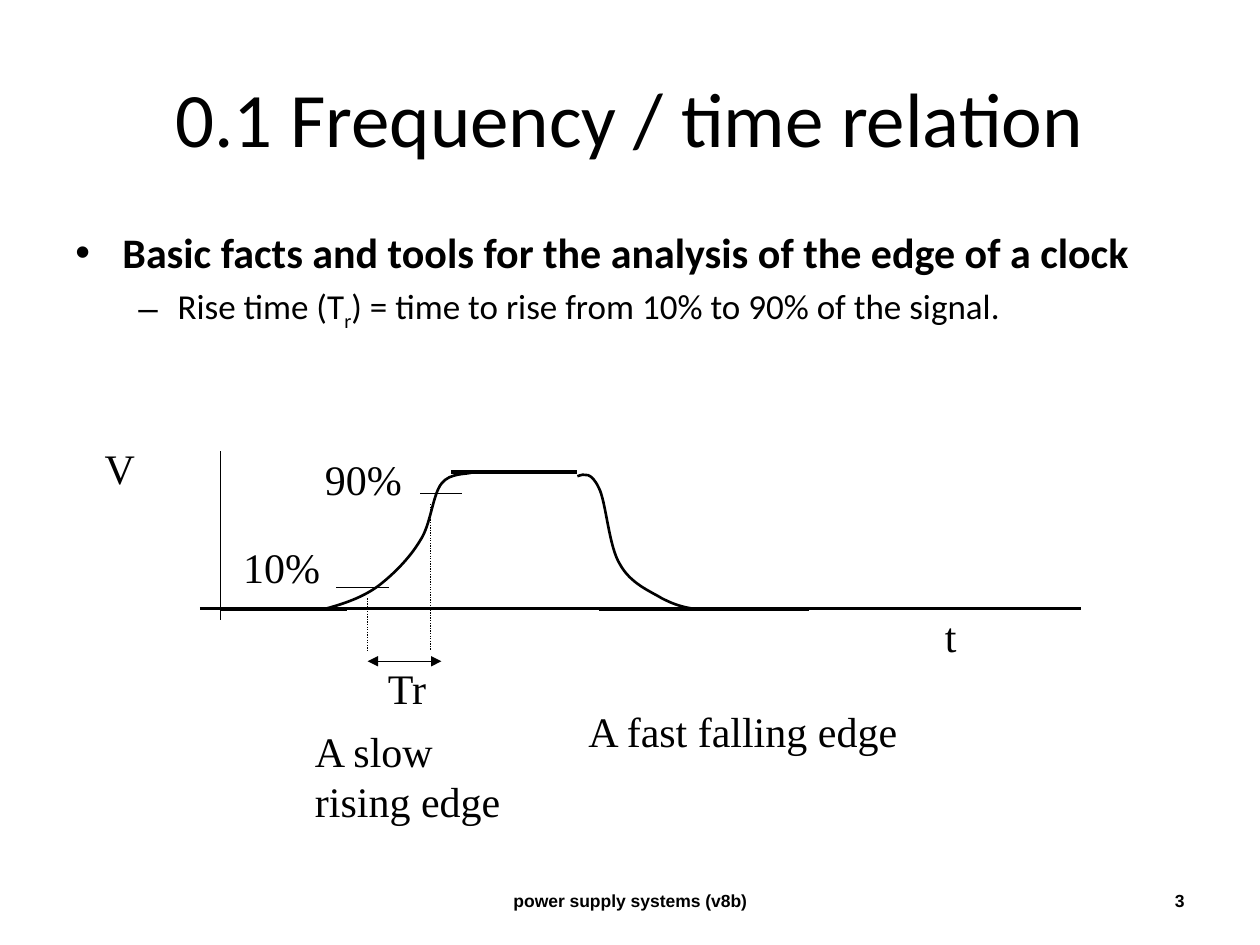
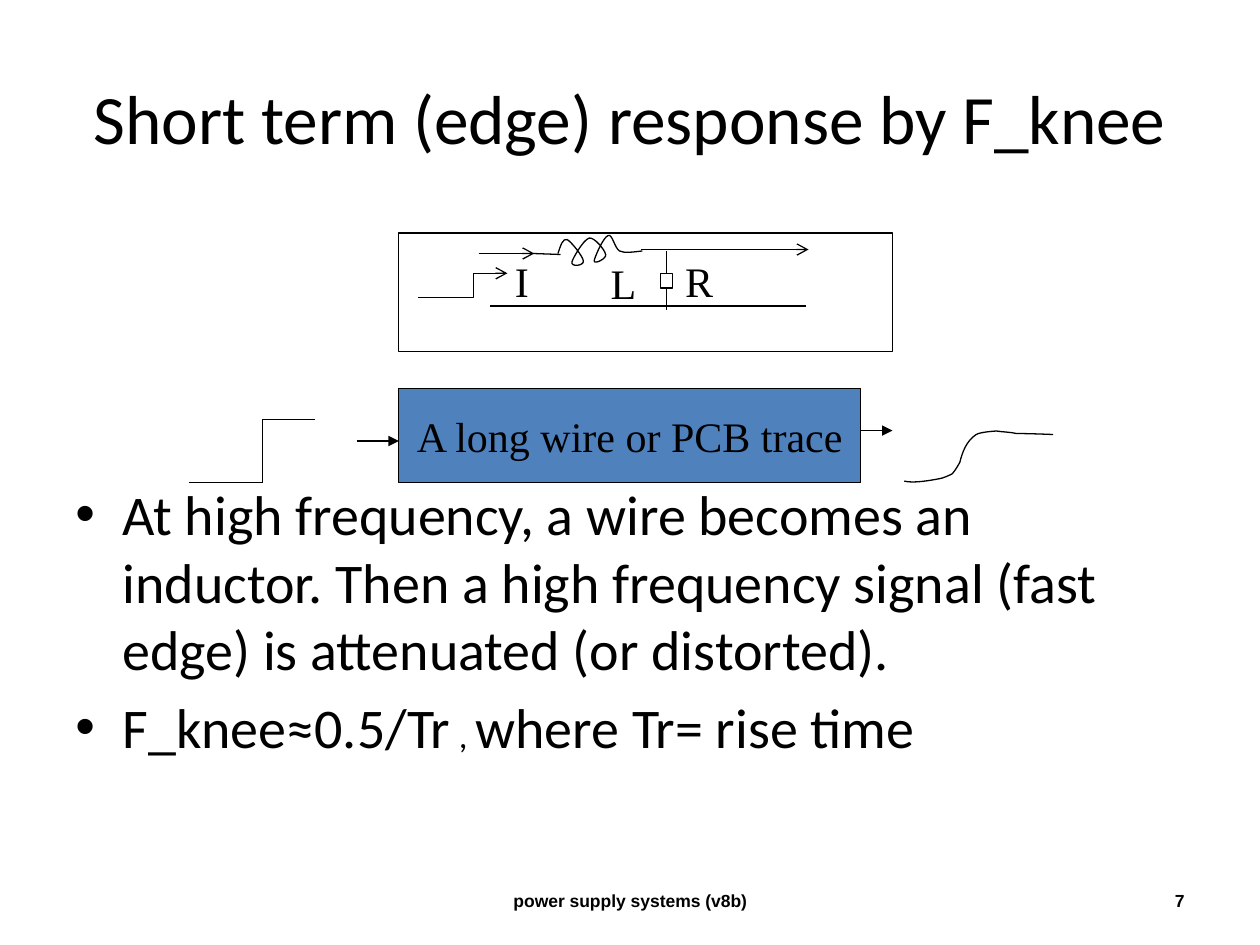
import dataclasses
import itertools

import lxml.etree
import pptx
import pptx.dml.color
import pptx.enum.dml
import pptx.enum.shapes
import pptx.enum.text
import pptx.oxml.ns
import pptx.util

Cm, Pt = pptx.util.Cm, pptx.util.Pt
qn = pptx.oxml.ns.qn
ALIGN = pptx.enum.text.PP_ALIGN
ANCHOR = pptx.enum.text.MSO_ANCHOR
FIT = pptx.enum.text.MSO_AUTO_SIZE
RECTANGLE = pptx.enum.shapes.MSO_SHAPE.RECTANGLE
STRAIGHT = pptx.enum.shapes.MSO_CONNECTOR.STRAIGHT
DOTTED = pptx.enum.dml.MSO_LINE.ROUND_DOT


@dataclasses.dataclass(frozen=True)
class Theme:
    ink: str = "000000"
    paper: str = "FFFFFF"
    accent: str = "4F81BD"
    heading_font: str = "Calibri"
    label_font: str = "Times New Roman"
    footer_font: str = "Arial"
    title: float = 44
    long_title: float = 39.6
    body: float = 32
    fact: float = 24
    detail: float = 20
    label: float = 24
    footer: float = 10
    thin: float = 0.75
    medium: float = 1.5
    thick: float = 2.25


@dataclasses.dataclass(frozen=True)
class Box:
    """A region in centimetres."""
    left: float
    top: float
    width: float
    height: float

    def point(self, x, y):
        return Cm(self.left + x), Cm(self.top + y)

    def inner(self, x, y, width, height):
        return Box(self.left + x, self.top + y, width, height)

    def frame(self):
        return [Cm(n) for n in (self.left, self.top, self.width, self.height)]


THEME = Theme()
TITLE_BOX = Box(1.27, 0.76, 22.86, 3.18)
FOOTER_BOX = Box(8.68, 17.65, 8.05, 1.02)
NUMBER_BOX = Box(18.21, 17.65, 5.92, 1.02)
FOOTER_TEXT = "power supply systems (v8b)"
# Bullet sign, left margin and hanging indent by level
BULLETS = [("•", 0.95, -0.95), ("–", 2.06, -0.79)]


def rgb(value):
    return pptx.dml.color.RGBColor.from_string(value)


# ---- Text ----

def add_span(para, text, font, size, bold=False, baseline=None):
    span = para.add_run()
    span.text = text
    for name, value in {"name": font, "size": Pt(size), "bold": bold}.items():
        setattr(span.font, name, value)
    span.font.color.rgb = rgb(THEME.ink)
    if baseline:
        span.font._element.set("baseline", str(baseline))


def add_text(page, box, lines, font, size, bold=False, align=ALIGN.LEFT, **settings):
    frame = page.shapes.add_textbox(*box.frame()).text_frame
    for name, value in {"word_wrap": True, **settings}.items():
        setattr(frame, name, value)
    for index, line in enumerate(lines):
        para = frame.add_paragraph() if index else frame.paragraphs[0]
        para.alignment = align
        add_span(para, line, font, size, bold)


def add_label(page, area, x, y, width, *lines, wrap=False):
    add_text(page, area.inner(x, y, width, 0.25 + 1.02 * len(lines)), lines,
             THEME.label_font, THEME.label, word_wrap=wrap,
             auto_size=FIT.SHAPE_TO_FIT_TEXT)


def add_bullets(page, box, items):
    """Each item is a level and its spans: (text, size, further formats)."""
    frame = page.shapes.add_textbox(*box.frame()).text_frame
    frame.word_wrap = True
    for index, (level, spans) in enumerate(items):
        para = frame.add_paragraph() if index else frame.paragraphs[0]
        para.level = level
        para.space_before = Pt(0.2 * spans[0][1])
        sign, margin, indent = BULLETS[level]
        properties = para._p.get_or_add_pPr()
        properties.set("marL", str(Cm(margin)))
        properties.set("indent", str(Cm(indent)))
        for tag, key, value in (("a:buFont", "typeface", "Arial"),
                                ("a:buChar", "char", sign)):
            lxml.etree.SubElement(properties, qn(tag)).set(key, value)
        for text, size, formats in spans:
            add_span(para, text, THEME.heading_font, size, **formats)


# ---- Lines and shapes ----

def style_line(shape, width, dash=None, head=None, tail=None):
    shape.line.color.rgb = rgb(THEME.ink)
    shape.line.width = Pt(width)
    if dash:
        shape.line.dash_style = dash
    outline = shape.element.spPr.find(qn("a:ln"))
    for tag, kind in (("a:headEnd", head), ("a:tailEnd", tail)):
        if kind:
            lxml.etree.SubElement(outline, qn(tag)).set("type", kind)


def add_line(page, area, start, end, width=THEME.thin, **style):
    line = page.shapes.add_connector(STRAIGHT, *area.point(*start), *area.point(*end))
    style_line(line, width, **style)
    lxml.etree.SubElement(line.element.spPr, qn("a:effectLst"))
    return line


def add_outline(page, area, points, width=THEME.thin, curved=False, **style):
    """Joins the points; if curved, every three points make a Bézier segment."""
    start, *others = [area.point(*point) for point in points]
    builder = page.shapes.build_freeform(*start)
    builder.add_line_segments(others, close=False)
    shape = builder.convert_to_shape()
    shape.shadow.inherit = False
    shape.fill.background()
    style_line(shape, width, **style)
    if curved:
        drawn = shape.element.find(".//" + qn("a:path"))
        steps = drawn.findall(qn("a:lnTo"))
        for index in range(0, len(steps), 3):
            bezier = lxml.etree.SubElement(drawn, qn("a:cubicBezTo"))
            for step in steps[index:index + 3]:
                bezier.append(step[0])
                drawn.remove(step)


def add_rectangle(page, box, fill):
    shape = page.shapes.add_shape(RECTANGLE, *box.frame())
    shape.shadow.inherit = False
    shape.fill.solid()
    shape.fill.fore_color.rgb = rgb(fill)
    style_line(shape, THEME.thin)
    return shape


# ---- Regions ----

def add_page(deck, title, size, number):
    page = deck.slides.add_slide(deck.slide_layouts[6])
    middle = {"vertical_anchor": ANCHOR.MIDDLE}
    add_text(page, TITLE_BOX, [title], THEME.heading_font, size,
             align=ALIGN.CENTER, **middle)
    for box, text, align in ((FOOTER_BOX, FOOTER_TEXT, ALIGN.CENTER),
                             (NUMBER_BOX, str(number), ALIGN.RIGHT)):
        add_text(page, box, [text], THEME.footer_font, THEME.footer, True, align, **middle)
    return page


def draw_pulse(page, area):
    """Voltage over time; the top of the V axis is the area's top left corner."""
    base, high = area.height, 0.42
    ten, ninety = 2.96, 4.23

    # Axes
    add_line(page, area, (0, 0), (0, base + 0.23))
    add_line(page, area, (-0.42, base), (area.width, base), THEME.medium)

    # Flat levels of the signal
    for start, end, level in ((4.65, 7.19, high), (7.62, 11.85, base), (0, 2.54, base)):
        add_line(page, area, (start, level), (end, level), THEME.thick)

    # Thresholds and rise time
    for start, end, level in ((2.33, 3.39, 2.75), (4.02, 4.87, 0.85)):
        add_line(page, area, (start, level), (end, level))
    for x, top in ((ten, 2.96), (ninety, 1.06)):
        add_line(page, area, (x, top), (x, 4.02), dash=DOTTED)
    add_line(page, area, (ten, 4.23), (4.45, 4.23), head="triangle", tail="triangle")

    # Edges
    rising = [(2.12, base), (2.49, 3.07), (2.87, 2.94), (3.18, 2.71),
              (3.48, 2.48), (3.81, 2.15), (4.02, 1.8),
              (4.24, 1.47), (4.27, 0.88), (4.45, 0.65),
              (4.62, 0.42), (4.98, 0.47), (5.08, high)]
    falling = [(7.19, 0.5), (7.34, 0.45), (7.47, 0.42), (7.62, 0.73),
               (7.77, 1.01), (7.82, 1.92), (8.05, 2.28),
               (8.26, 2.66), (8.64, 2.81), (8.89, 2.96),
               (9.14, 3.09), (9.32, 3.14), (9.52, base)]
    for edge in (rising, falling):
        add_outline(page, area, edge, THEME.medium, curved=True)

    # Labels
    for label in ((0.2, 1.69, 2.06, "10%"), (1.85, -0.08, 2.06, "90%"),
                  (3.12, 4.13, 1.32, "Tr"),
                  (1.65, 5.4, 4.24, "A slow", "rising edge"),
                  (7.16, 5, 6.78, "A fast falling edge"),
                  (-2.59, -0.31, 1.12, "V"), (14.35, 3.09, 0.74, "t")):
        add_label(page, area, *label)


def draw_circuit(page, area):
    """Inductor and resistor that stand for the wire."""
    add_rectangle(page, area, THEME.paper)

    # Wires
    add_line(page, area, (1.61, 0.41), (2.73, 0.41), tail="arrow")
    add_line(page, area, (2.7, 0.41), (3.26, 0.43))
    add_line(page, area, (4.88, 0.33), (8.26, 0.33), tail="arrow")
    add_line(page, area, (1.84, 1.47), (8.21, 1.47))

    # Resistor with its leads
    resistor = add_rectangle(page, area.inner(5.27, 0.81, 0.25, 0.3), THEME.paper)
    middle = 5.27 + 0.25 / 2
    add_line(page, area, (middle, 0.36), (middle, 0.81)).end_connect(resistor, 0)
    add_line(page, area, (middle, 1.11), (middle, 1.55)).begin_connect(resistor, 2)

    # Coil
    coil = [(3.21, 0.41), (3.26, 0.25), (3.31, 0.1), (3.39, 0.13),
            (3.46, 0.15), (3.72, 0.48), (3.72, 0.56),
            (3.74, 0.66), (3.46, 0.69), (3.49, 0.58),
            (3.51, 0.51), (3.72, 0.13), (3.84, 0.1),
            (3.94, 0.08), (4.15, 0.33), (4.17, 0.43),
            (4.2, 0.51), (3.94, 0.64), (3.94, 0.56),
            (3.94, 0.51), (4.12, 0.08), (4.22, 0.05),
            (4.3, 0), (4.35, 0.3), (4.45, 0.36),
            (4.55, 0.41), (4.73, 0.38), (4.91, 0.36)]
    add_outline(page, area, coil, curved=True)

    # Input step and labels
    add_outline(page, area, [(0.39, 1.3), (1.51, 1.3), (1.51, 0.81), (2.19, 0.81)],
                tail="arrow")
    for label in ((2.09, 0.33, 0.51, "I"), (4.02, 0.36, 0.58, "L"), (5.52, 0.33, 0.64, "R")):
        add_label(page, area, *label, wrap=True)


def draw_trace(page, area):
    """The wire, with the step going in and the smoothed step coming out."""
    frame = add_rectangle(page, area, THEME.accent).text_frame
    frame.word_wrap = False
    frame.vertical_anchor = ANCHOR.MIDDLE
    frame.paragraphs[0].alignment = ALIGN.CENTER
    add_span(frame.paragraphs[0], "A long wire or PCB trace", THEME.label_font, THEME.label)

    # Input step
    corners = [(-4.23, area.height), (-2.75, area.height), (-2.75, 0.63), (-1.69, 0.63)]
    for start, end in itertools.pairwise(corners):
        add_line(page, area, start, end)

    # Arrows in and out
    for start, end, y in ((-0.85, 0, 1.06), (area.width, area.width + 0.64, 0.85)):
        add_line(page, area, (start, y), (end, y), tail="triangle")

    # Output response
    response = [(10.19, 1.87), (10.37, 1.92), (10.75, 1.85), (10.9, 1.82),
                (10.95, 1.82), (11.13, 1.74), (11.16, 1.72),
                (11.23, 1.64), (11.31, 1.49), (11.31, 1.49),
                (11.36, 1.29), (11.44, 1.06), (11.64, 0.93),
                (11.72, 0.88), (12.02, 0.86), (12.05, 0.86),
                (12.17, 0.88), (12.33, 0.88), (12.45, 0.91),
                (12.71, 0.91), (13.19, 0.93), (13.19, 0.93)]
    add_outline(page, area, response, curved=True)


# ---- Slides ----

def build_relation_slide(deck):
    page = add_page(deck, "0.1 Frequency / time relation", THEME.title, 3)
    add_bullets(page, Box(1.27, 4.45, 22.86, 12.57), [
        (0, [("Basic facts and tools for the analysis of the edge of a clock",
              THEME.fact, {"bold": True})]),
        (1, [("Rise time (T", THEME.detail, {}),
             ("r", THEME.detail, {"baseline": -25000}),
             (") = time to rise from 10% to 90% of the signal.", THEME.detail, {})]),
    ])
    draw_pulse(page, Box(4.45, 9.1, 17.35, 3.17))


def build_response_slide(deck):
    page = add_page(deck, "Short term (edge) response by F_knee", THEME.long_title, 7)
    add_bullets(page, Box(1.27, 9.55, 22.86, 7.47), [
        (0, [("At high frequency, a wire becomes an inductor. Then a high frequency "
              "signal (fast edge) is attenuated (or distorted).", THEME.body, {})]),
        (0, [("F_knee≈0.5/Tr", THEME.body, {}), (" , ", THEME.detail, {}),
             ("where Tr= rise time", THEME.body, {})]),
    ])
    draw_trace(page, Box(8.04, 7.83, 9.31, 1.9))
    draw_circuit(page, Box(8.04, 4.7, 9.96, 2.39))


def main():
    deck = pptx.Presentation()
    deck.slide_width, deck.slide_height = Cm(25.4), Cm(19.05)
    build_relation_slide(deck)
    build_response_slide(deck)
    deck.save("out.pptx")


if __name__ == "__main__":
    main()
